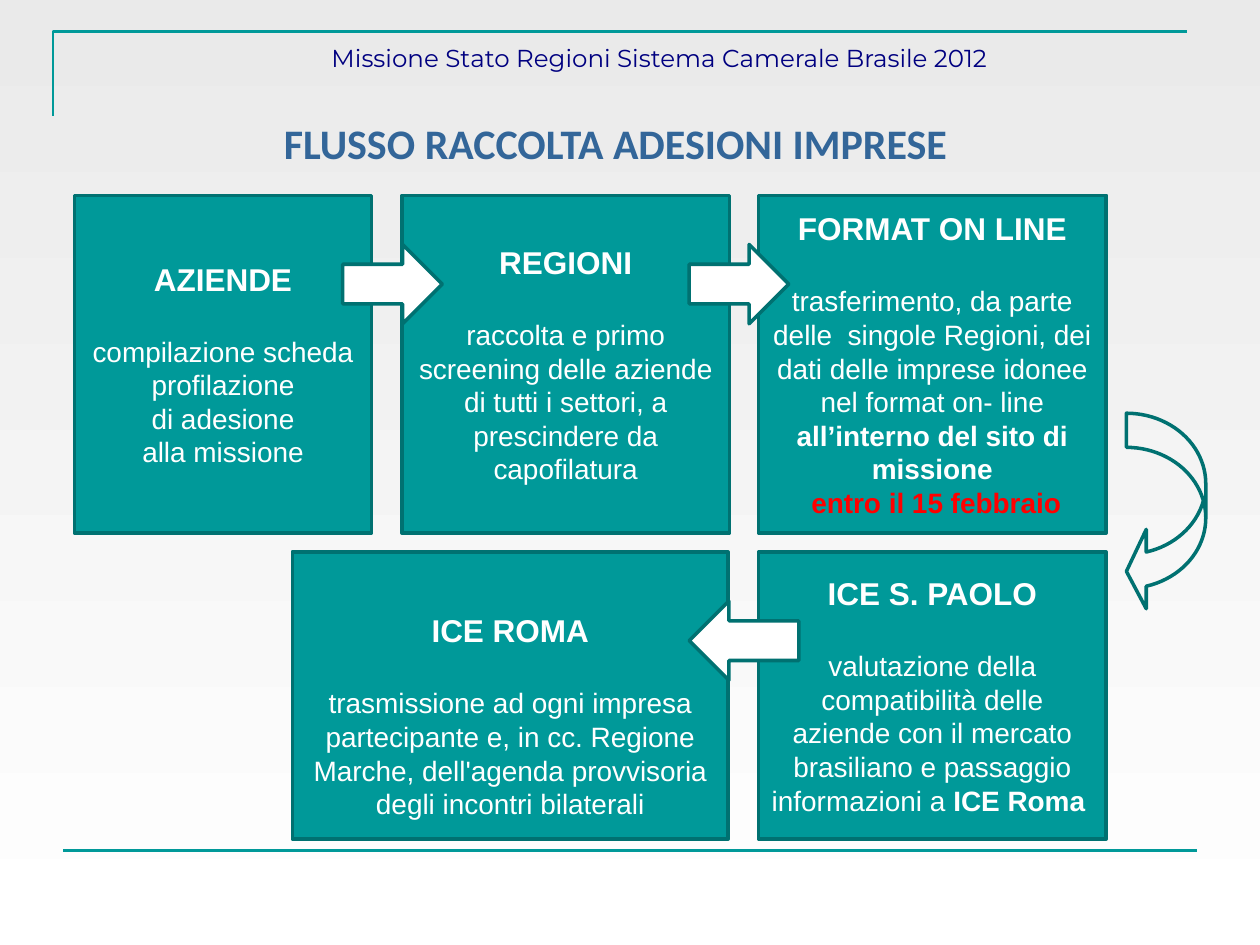
from pptx import Presentation
from pptx.dml.color import RGBColor
from pptx.enum import shapes, text
from pptx.util import Inches, Pt

THEME = {
    "teal": "009999", "edge": "007171", "white": "FFFFFF", "red": "FF0000",
    "navy": "000080", "blue": "336699", "top": "EAEAEA",
    "body": "Arial", "head": "Calibri", "note": "Montserrat",
    "small": 14, "text": 16, "label": 18, "title": 24,
    "rule": 1.5, "line": 2, "gap": 21,
}
KIND = shapes.MSO_SHAPE

HEADER = "Missione Stato Regioni Sistema Camerale Brasile 2012"
TITLE = "FLUSSO RACCOLTA ADESIONI IMPRESE"

# Rows of the flow: top and height
ROWS = [(1.55, 2.68), (4.38, 2.28)]

# Each box: row, left, width, top inset, label, paragraphs of (text, format) runs
BOXES = [
    (0, 0.59, 2.36, 0.05, "AZIENDE", [
        [("compilazione scheda profilazione", {})],
        [("di adesione", {})],
        [("alla missione", {})]]),
    (0, 3.19, 2.6, 0.05, "REGIONI", [
        [("raccolta e primo screening delle aziende di tutti i settori, "
          "a prescindere da capofilatura", {})]]),
    (0, 6.02, 2.76, 0.05, "FORMAT ON LINE", [
        [("trasferimento, da parte delle  singole Regioni, dei dati delle "
          "imprese idonee nel format on- line ", {}),
         ("all’interno del sito di missione", {"bold": True})],
        [(" ", {}), ("entro il 15 febbraio", {"bold": True, "color": "red"})]]),
    (1, 6.02, 2.76, 0.05, "ICE S. PAOLO", [
        [("valutazione della compatibilità delle aziende con il mercato "
          "brasiliano e passaggio informazioni a ", {}),
         ("ICE Roma ", {"bold": True})]]),
    (1, 2.32, 3.46, 0.37, "ICE ROMA", [
        [("trasmissione ad ogni impresa partecipante e, in cc. Regione Marche, "
          "dell'agenda provvisoria degli incontri bilaterali", {})]]),
]

# Each arrow: kind, place, fill, adjustments
ARROWS = [
    (KIND.RIGHT_ARROW, (2.72, 1.94, 0.79, 0.63), "white", ()),
    (KIND.RIGHT_ARROW, (5.47, 1.94, 0.79, 0.63), "white", ()),
    (KIND.CURVED_LEFT_ARROW, (8.94, 3.28, 0.63, 1.57), None, (0.43, 1, 0.25)),
    (KIND.LEFT_ARROW, (5.47, 4.77, 0.87, 0.63), "white", ()),
]


def rgb(name):
    return RGBColor.from_string(THEME[name])


def write(par, words, size="text", font="body", color="white", bold=False):
    """Add one formatted run to a centred paragraph."""
    par.alignment = text.PP_ALIGN.CENTER
    run = par.add_run()
    run.text = words
    run.font.size = Pt(THEME[size])
    run.font.name = THEME[font]
    run.font.color.rgb = rgb(color)
    run.font.bold = bold


def paint(shape, fill=None, line="edge", width="line"):
    shape.shadow.inherit = False
    if fill:
        shape.fill.solid()
        shape.fill.fore_color.rgb = rgb(fill)
    else:
        shape.fill.background()
    shape.line.color.rgb = rgb(line)
    shape.line.width = Pt(THEME[width])


def place(pos):
    return [Inches(n) for n in pos]


def frame(slide):
    """Gradient ground, corner rule at the top and rule at the foot."""
    fill = slide.background.fill
    fill.gradient()
    fill.gradient_angle = 270
    for stop, name in zip(fill.gradient_stops, ("top", "white")):
        stop.color.rgb = rgb(name)

    path = slide.shapes.build_freeform(Inches(0.42), Inches(0.92))
    path.add_line_segments([place((0.42, 0.25)), place((9.42, 0.25))], close=False)
    paint(path.convert_to_shape(), line="teal", width="rule")

    foot = slide.shapes.add_connector(
        shapes.MSO_CONNECTOR.STRAIGHT, *place((0.5, 6.75, 9.5, 6.75)))
    foot.line.color.rgb = rgb("teal")
    foot.line.width = Pt(THEME["rule"])
    foot._element.spPr.add_effectLst() if hasattr(
        foot._element.spPr, "add_effectLst") else foot._element.spPr.get_or_add_effectLst()


def heads(slide):
    box = slide.shapes.add_textbox(*place((1.69, 0.29, 7.09, 0.31)))
    box.text_frame.word_wrap = False
    write(box.text_frame.paragraphs[0], HEADER,
          size="small", font="note", color="navy")

    title = slide.shapes.title
    title.left, title.top, title.width, title.height = place((0.2, 0.68, 9.37, 0.55))
    area = title.text_frame
    area.auto_size = text.MSO_AUTO_SIZE.NONE
    area.vertical_anchor = text.MSO_ANCHOR.TOP
    par = area.paragraphs[0]
    par.line_spacing = 1.5
    write(par, TITLE, size="title", font="head", color="blue", bold=True)


def add_box(slide, row, left, width, inset, label, pars):
    top, height = ROWS[row]
    box = slide.shapes.add_shape(KIND.RECTANGLE, *place((left, top, width, height)))
    paint(box, fill="teal")
    area = box.text_frame
    area.word_wrap = True
    area.vertical_anchor = text.MSO_ANCHOR.MIDDLE
    area.margin_top = Inches(inset)
    head = area.paragraphs[0]
    head.space_after = Pt(THEME["gap"])
    write(head, label, size="label", bold=True)
    for runs in pars:
        par = area.add_paragraph()
        for words, form in runs:
            write(par, words, **form)


def add_arrow(slide, kind, pos, fill, adjust):
    arrow = slide.shapes.add_shape(kind, *place(pos))
    paint(arrow, fill=fill)
    for i, value in enumerate(adjust):
        arrow.adjustments[i] = value


def main():
    deck = Presentation()
    deck.slide_width, deck.slide_height = Inches(10), Inches(7.5)
    slide = deck.slides.add_slide(deck.slide_layouts[5])
    frame(slide)
    heads(slide)
    for box in BOXES:
        add_box(slide, *box)
    for arrow in ARROWS:
        add_arrow(slide, *arrow)
    deck.save("out.pptx")


if __name__ == "__main__":
    main()
